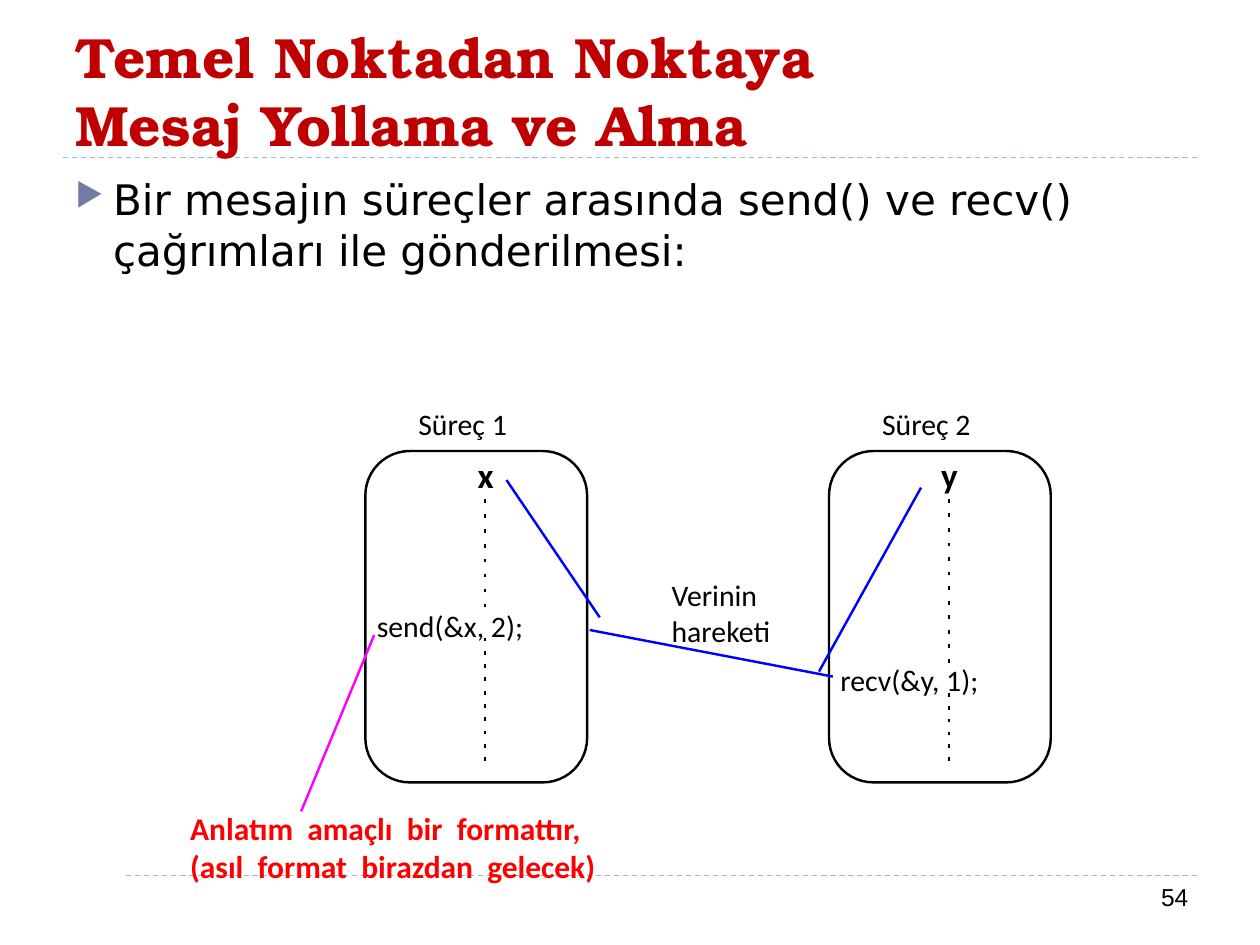
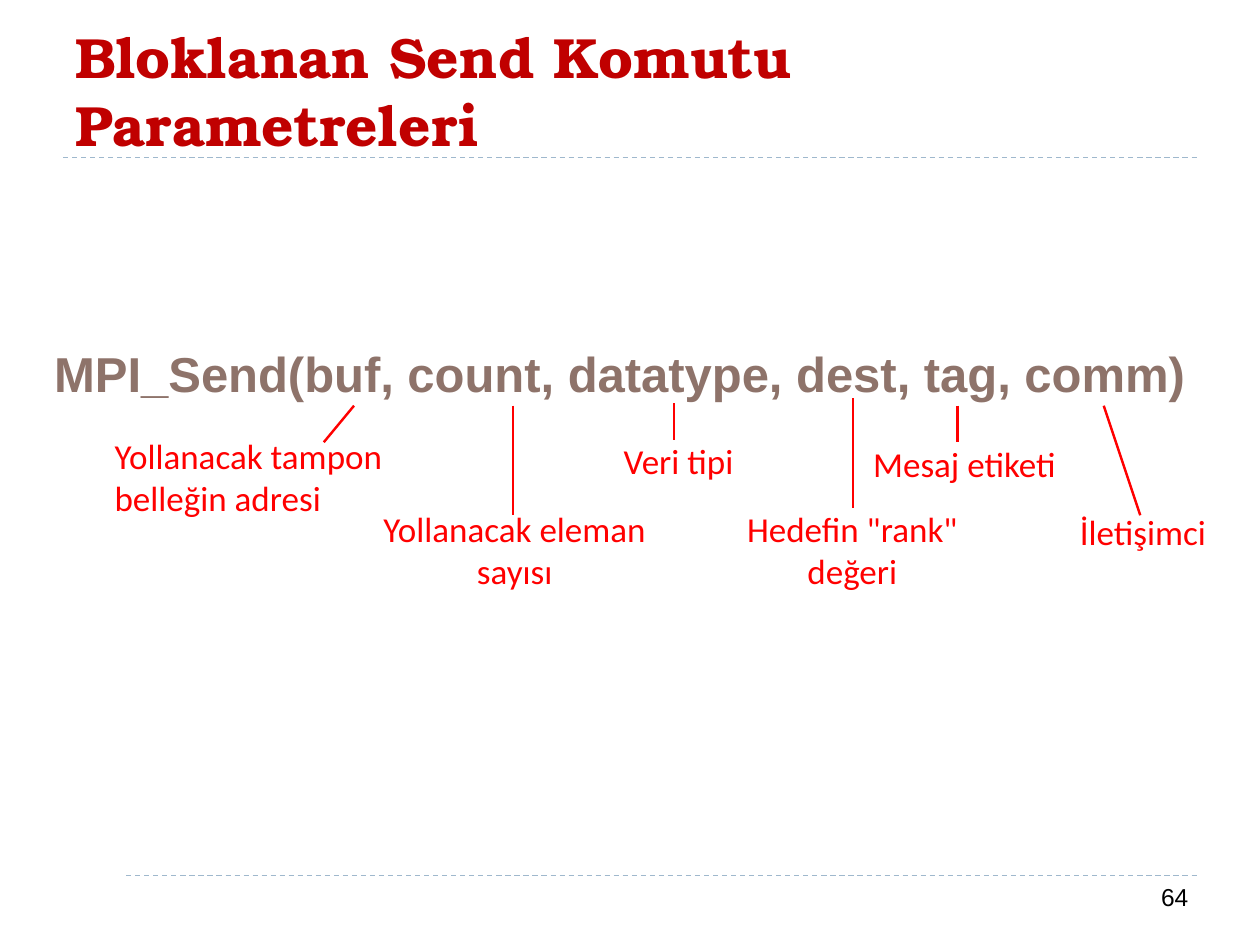
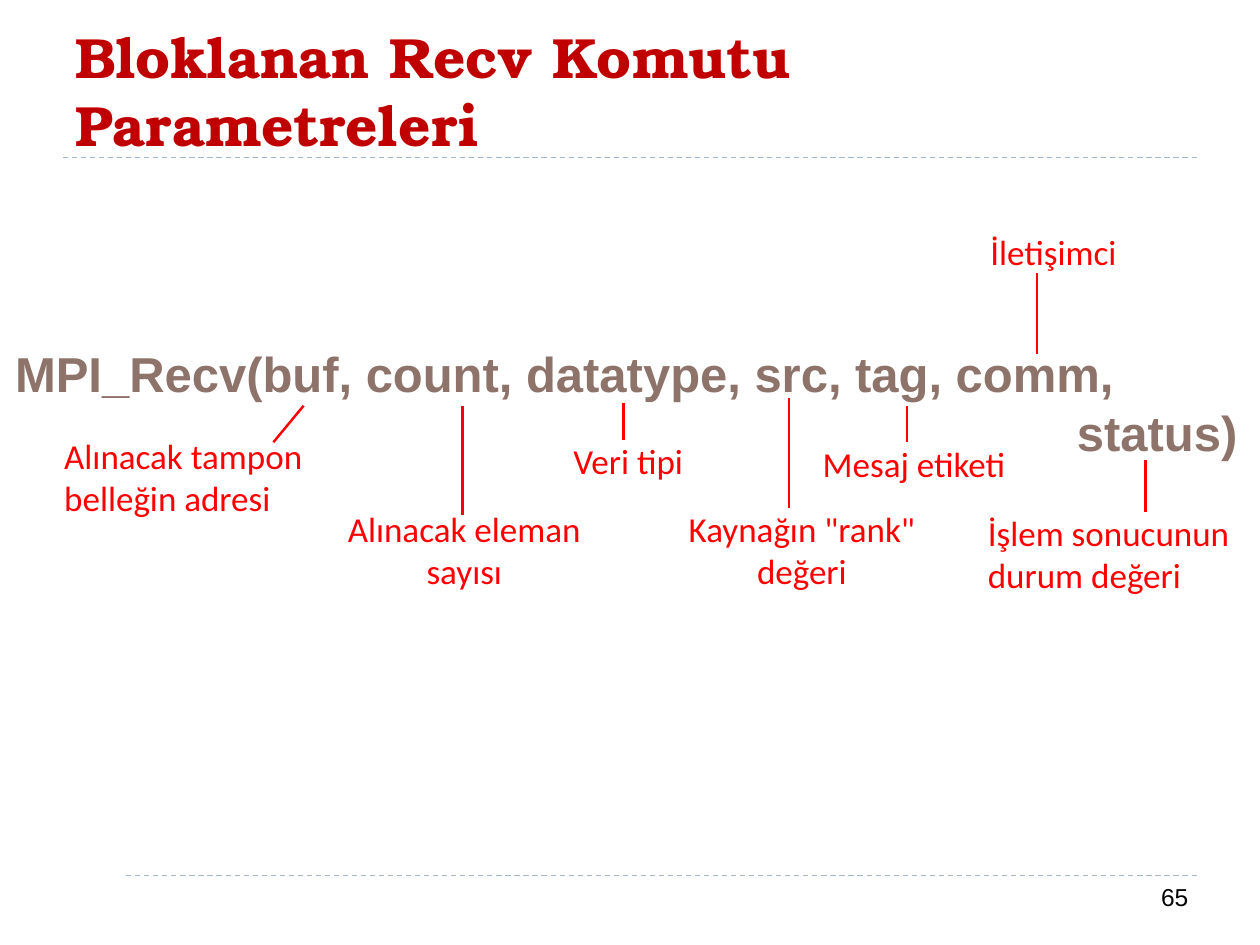
import pptx
import pptx.util
import pptx.dml.color
import pptx.enum.dml
import pptx.enum.shapes
import pptx.enum.text
import pptx.oxml.ns
from lxml import etree

# Shared formats
WIDE, HIGH = 10, 7.5
BLACK, BLUE, RED, PINK, WHITE = "000000", "0000FF", "FF0000", "FF00FF", "FFFFFF"
RULE, MARK = "9FB8CD", "727CA3"
THIN, PEN = 0.75, 1.38
PAD = (0.1, 0.05)
FORMS = {
    "title": {"name": "TeX Gyre Bonum", "size": 32.4, "color": "C00000", "bold": True},
    "page": {"name": "Arial", "size": 14, "color": BLACK},
    "body": {"name": "DejaVu Sans", "size": 24, "color": BLACK},
    "code": {"name": "Arial", "size": 28, "color": "8E736A", "bold": True},
    "label": {"name": "Calibri", "size": 20, "color": RED},
    "small": {"name": "Calibri", "size": 17, "color": BLACK},
    "value": {"name": "Calibri", "size": 20, "color": BLACK, "bold": True},
    "note": {"name": "Calibri", "size": 18, "color": RED, "bold": True},
}
ALIGN = {
    "l": pptx.enum.text.PP_ALIGN.LEFT,
    "c": pptx.enum.text.PP_ALIGN.CENTER,
    "r": pptx.enum.text.PP_ALIGN.RIGHT,
}

# Message slide: boxes stand one step apart
STEP, TOP = 3.68, 3.58
POINT = "Bir mesajın süreçler arasında send() ve recv() çağrımları ile gönderilmesi:"
TASKS = [  # name, variable, call, top of call, dash runs (first, last, count)
    ("Süreç 1", "x", "send(&x, 2);", 4.82, [(3.96, 4.79, 8), (5.06, 6.01, 10)]),
    ("Süreç 2", "y", "recv(&y, 1);", 5.25, [(3.96, 5.23, 12), (5.5, 6.01, 6)]),
]
FLOW = [  # start, end, colour
    ((4.68, 5), (6.61, 5.37), BLUE),
    ((4.02, 3.81), (4.76, 4.9), BLUE),
    ((6.5, 5.33), (7.31, 3.87), BLUE),
    ((2.39, 6.44), (2.97, 5.04), PINK),
]
HEADS = [
    [(4.76, 4.9), (4.76, 4.86), (4.8, 4.96), (4.72, 4.9)],
    [(7.31, 3.87), (7.3, 3.87), (7.35, 3.81), (7.33, 3.89)],
]

# Call slides: label places (left, top, width, align) and leaders, moved by "shift"
SLOTS = [
    (0.91, 3.45, 2.36, "l"),
    (2.91, 4.03, 2.35, "c"),
    (4.95, 3.49, 0.92, "l"),
    (5.76, 4.03, 2.01, "c"),
    (6.93, 3.51, 1.56, "l"),
]
LEADS = [
    ((2.81, 3.22), (2.57, 3.51)),
    ((4.07, 3.22), (4.07, 4.09)),
    ((5.35, 3.2), (5.35, 3.49)),
    ((7.6, 3.22), (7.6, 3.51)),
]
CALLS = [
    {
        "title": "Bloklanan Send Komutu Parametreleri", "page": 64, "shift": 0,
        "code": ["MPI_Send(buf, count, datatype, dest, tag, comm)"],
        "box": (0.43, 2.73, 9.09, 0.47),
        "labels": ["Yollanacak tampon\nbelleğin adresi", "Yollanacak eleman\nsayısı",
                   "Veri tipi", 'Hedefin "rank"\ndeğeri', "Mesaj etiketi"],
        "more": [("İletişimci", 8.57, 4.05, 1.08)],
        "leads": [((6.77, 3.16), (6.77, 4.03)), ((8.76, 3.22), (9.05, 4.09))],
    },
    {
        "title": "Bloklanan Recv Komutu Parametreleri", "page": 65, "shift": -0.4,
        "code": ["MPI_Recv(buf, count, datatype, src, tag, comm,", "status)"],
        "box": (0.12, 2.73, 9.7, 0.94),
        "labels": ["Alınacak tampon\nbelleğin adresi", "Alınacak eleman\nsayısı",
                   "Veri tipi", 'Kaynağın "rank"\ndeğeri', "Mesaj etiketi"],
        "more": [("İletişimci", 7.86, 1.83, 1.08),
                 ("İşlem sonucunun\ndurum değeri", 7.84, 4.06, 2.12)],
        "leads": [((6.26, 3.16), (6.26, 4.03)), ((8.23, 2.17), (8.23, 2.81)),
                  ((9.09, 4.06), (9.09, 3.65))],
    },
]


# Helpers
def inch(*nums):
    return [pptx.util.Inches(n) for n in nums]


def paint(part, tone):
    if hasattr(part, "solid"):
        part.solid()
        part = part.fore_color
    elif hasattr(part, "fill"):
        part = part.color
    part.rgb = pptx.dml.color.RGBColor.from_string(tone)


def text(slide, words, box, form, align="l", pad=(0, 0)):
    """Add a text box; a list gives paragraphs, a line feed breaks a line."""
    frame = slide.shapes.add_textbox(*inch(*box)).text_frame
    side, edge = inch(*pad)
    look = {"word_wrap": True, "margin_left": side, "margin_right": side,
            "margin_top": edge, "margin_bottom": edge}
    for key, val in look.items():
        setattr(frame, key, val)
    for num, line in enumerate([words] if isinstance(words, str) else words):
        para = frame.add_paragraph() if num else frame.paragraphs[0]
        para.alignment = ALIGN[align]
        for pos, piece in enumerate(line.split("\n")):
            if pos:
                para.add_line_break()
            run = para.add_run()
            run.text = piece
            for key, val in FORMS[form].items():
                if key == "color":
                    paint(run.font.color, val)
                else:
                    setattr(run.font, key, pptx.util.Pt(val) if key == "size" else val)
    return frame


def line(slide, start, end, tone, width=PEN, dash=False):
    kind = pptx.enum.shapes.MSO_CONNECTOR.STRAIGHT
    link = slide.shapes.add_connector(kind, *inch(*start, *end))
    paint(link.line, tone)
    link.line.width = pptx.util.Pt(width)
    if dash:
        link.line.dash_style = pptx.enum.dml.MSO_LINE.DASH
    etree.SubElement(link._element.spPr, pptx.oxml.ns.qn("a:effectLst"))


def finish(shape, fill=None, edge=None):
    shape.shadow.inherit = False
    if fill:
        paint(shape.fill, fill)
    else:
        shape.fill.background()
    if edge:
        paint(shape.line, edge)
        shape.line.width = pptx.util.Pt(PEN)
    else:
        shape.line.fill.background()


def bullet(para):
    para.space_before = pptx.util.Pt(12)
    props = para._p.get_or_add_pPr()
    indent = inch(0.3)[0]
    props.set("marL", str(indent))
    props.set("indent", str(-indent))
    tone = etree.SubElement(props, pptx.oxml.ns.qn("a:buClr"))
    etree.SubElement(tone, pptx.oxml.ns.qn("a:srgbClr"), val=MARK)
    etree.SubElement(props, pptx.oxml.ns.qn("a:buSzPct"), val="76000")
    etree.SubElement(props, pptx.oxml.ns.qn("a:buChar"), char="▶")


def start(deck, title, page):
    """Add a slide with the shared rules, title and page number."""
    slide = deck.slides.add_slide(deck.slide_layouts[6])
    for y in (6.95, 1.25):
        line(slide, (0.5, y), (WIDE - 0.5, y), RULE, THIN, True)
    kind = pptx.enum.shapes.MSO_SHAPE.RECTANGLE
    finish(slide.shapes.add_shape(kind, *inch(0.35, 6.82, 0.63, 0.63)), WHITE)
    frame = text(slide, title, (0.5, 0.17, 9, 1.08), "title", pad=PAD)
    frame.vertical_anchor = pptx.enum.text.MSO_ANCHOR.MIDDLE
    text(slide, str(page), (7.2, 6.95, 2.33, 0.4), "page", "r", PAD)
    return slide


# Slides
def message(deck):
    slide = start(deck, "Temel Noktadan Noktaya\nMesaj Yollama ve Alma", 54)
    bullet(text(slide, POINT, (0.5, 1.33, 9, 5.4), "body", pad=PAD).paragraphs[0])
    for num, (name, var, call, y, runs) in enumerate(TASKS):
        left = 2.9 + num * STEP
        text(slide, name, (left + 0.42, 3.22, 0.82, 0.29), "small")
        text(slide, call, (left + 0.09, y, 1.28, 0.28), "small")
        for first, last, count in runs:
            for i in range(count):
                dot = first + i * (last - first) / (count - 1)
                line(slide, (left + 0.95, dot), (left + 0.95, dot + 0.03), BLACK)
        kind = pptx.enum.shapes.MSO_SHAPE.ROUNDED_RECTANGLE
        box = slide.shapes.add_shape(kind, *inch(left, TOP, 1.76, 2.63))
        box.adjustments[0] = 0.2
        finish(box, edge=BLACK)
        text(slide, var, (left + 0.89, 3.6, 0.15, 0.33), "value")
    for begin, end, tone in FLOW:
        line(slide, begin, end, tone)
    for tip in HEADS:
        pen = slide.shapes.build_freeform(*tip[0], scale=pptx.util.Inches(1))
        pen.add_line_segments(tip[1:], close=True)
        finish(pen.convert_to_shape(), BLUE, BLUE)
    text(slide, "Verinin\nhareketi", (5.33, 4.58, 0.85, 0.57), "small")
    note = "Anlatım  amaçlı  bir  formattır,\n(asıl  format  birazdan  gelecek)"
    text(slide, note, (1.51, 6.42, 3.76, 0.61), "note")


def command(deck, call):
    slide = start(deck, call["title"], call["page"])
    shift = call["shift"]
    code = text(slide, call["code"], call["box"], "code")
    for para in code.paragraphs[1:]:
        para.alignment = ALIGN["r"]
    for words, (x, y, wide, align) in zip(call["labels"], SLOTS):
        rows = words.count("\n") + 1
        text(slide, words, (x + shift, y, wide, rows * 0.34), "label", align)
    for words, x, y, wide in call["more"]:
        rows = words.count("\n") + 1
        text(slide, words, (x, y, wide, rows * 0.34), "label")
    for (x, y), (far, low) in LEADS:
        line(slide, (x + shift, y), (far + shift, low), RED)
    for begin, end in call["leads"]:
        line(slide, begin, end, RED)


def main():
    deck = pptx.Presentation()
    deck.slide_width, deck.slide_height = inch(WIDE, HIGH)
    message(deck)
    for call in CALLS:
        command(deck, call)
    deck.save("out.pptx")


if __name__ == "__main__":
    main()
